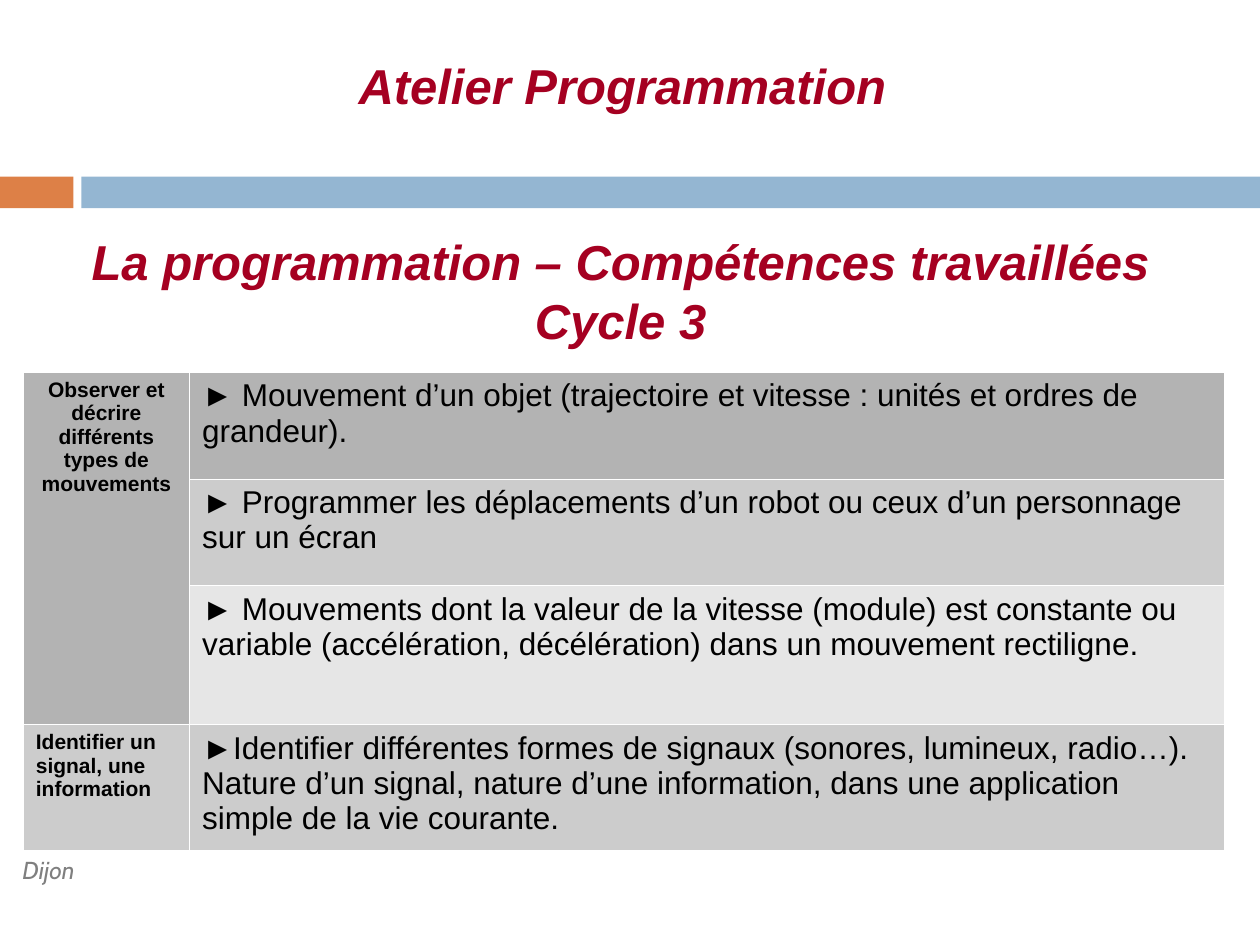
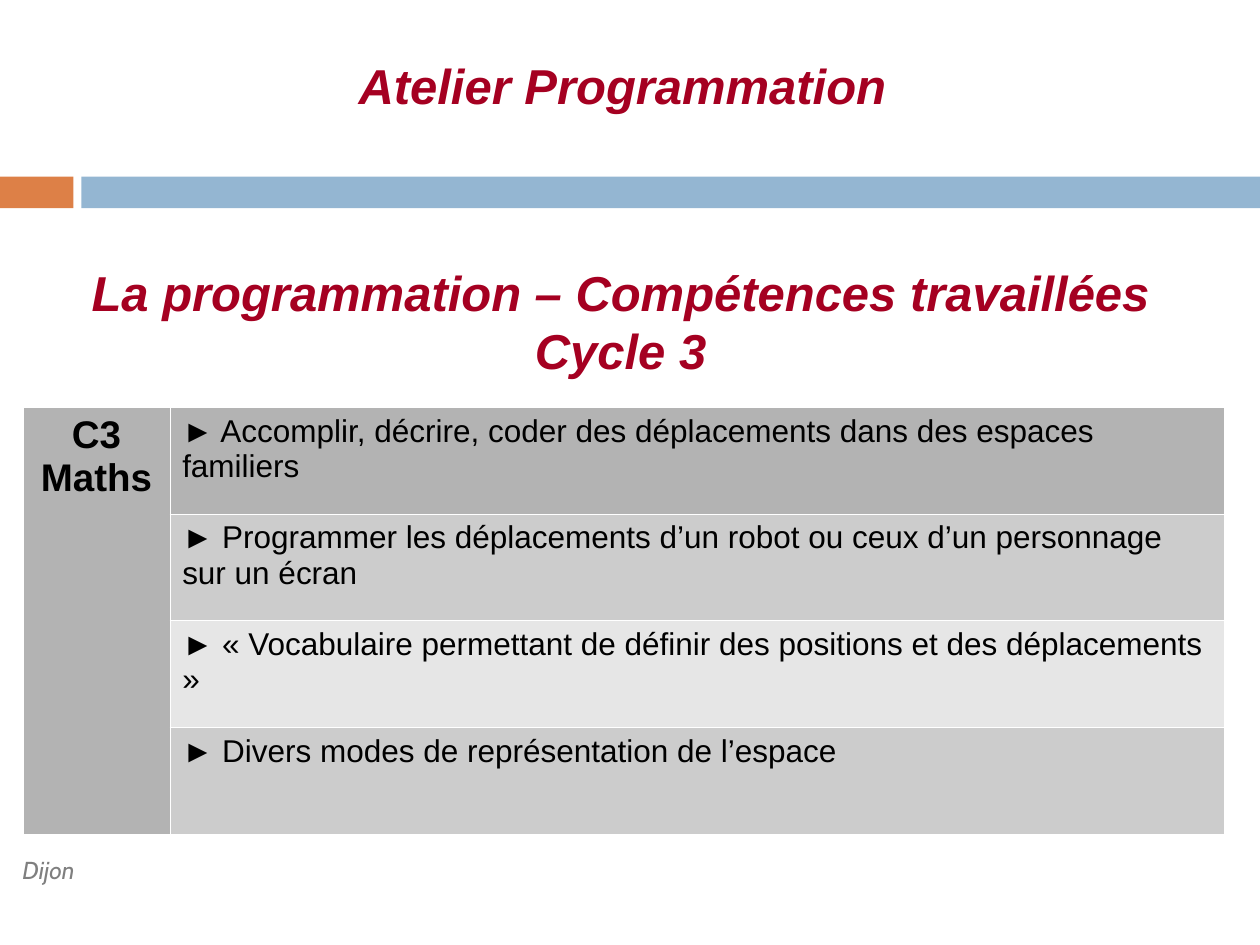
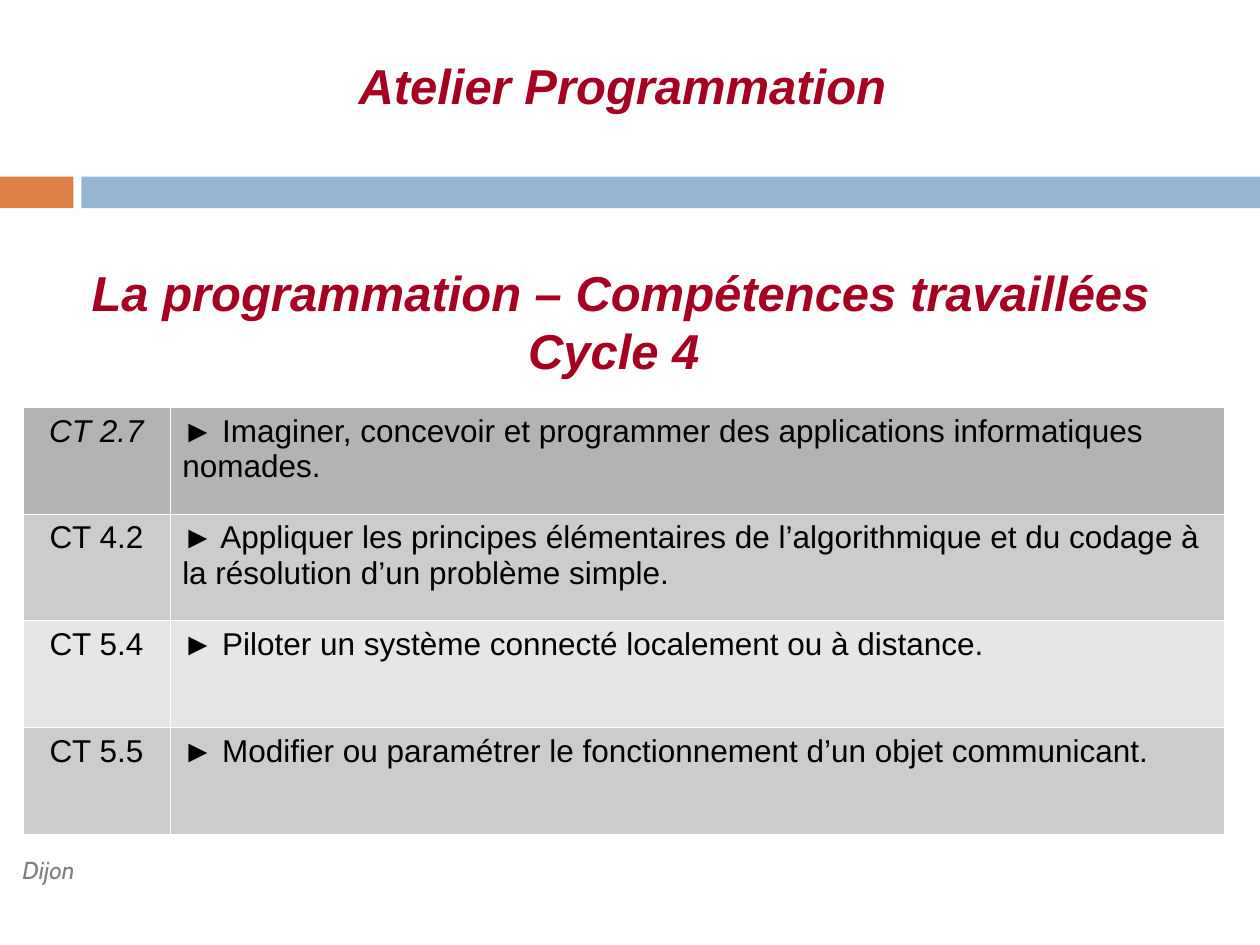
import dataclasses
import itertools
import typing

import lxml.etree
import pptx
import pptx.dml.color
import pptx.enum.shapes
import pptx.enum.text
import pptx.oxml.ns
import pptx.presentation
import pptx.shapes.autoshape
import pptx.slide
import pptx.table
import pptx.text.text
import pptx.util

Cm = pptx.util.Cm
Pt = pptx.util.Pt
ALIGN = pptx.enum.text.PP_ALIGN

COLORS = {
    "title": "A50021",
    "text": "000000",
    "footer": "7F7F7F",
    "accent": "DD8047",
    "band": "94B6D2",
    "border": "FFFFFF",
}
ROW_FILLS = ["B3B3B3", "CCCCCC", "E6E6E6", "CCCCCC"]

TITLE_FONT = {"name": "Arial", "size": Pt(28), "bold": True, "italic": True}
FOOTER_FONT = {"name": "Cabin", "size": Pt(14), "bold": False, "italic": True}
CELL_FONT = {"name": "Arial", "size": Pt(18), "bold": False, "italic": False}
TOPIC_FONT = CELL_FONT | {"size": Pt(12), "bold": True}
SUBJECT_FONT = CELL_FONT | {"size": Pt(22), "bold": True}
TABLE_WIDTH = 24.2


@dataclasses.dataclass(frozen=True)
class Box:
    left: float
    top: float
    width: float
    height: float

    def lengths(self) -> tuple[int, ...]:
        return tuple(Cm(value) for value in dataclasses.astuple(self))


@dataclasses.dataclass(frozen=True)
class Band:
    box: Box
    color: str


@dataclasses.dataclass(frozen=True)
class Label:
    text: str
    font: dict[str, typing.Any]
    alignment: ALIGN = ALIGN.CENTER


@dataclasses.dataclass(frozen=True)
class SkillRow:
    label: Label | None
    skill: str
    height: float = 2.15


@dataclasses.dataclass(frozen=True)
class SkillSlide:
    heading: str
    heading_top: float
    table_top: float
    label_width: float
    rows: list[SkillRow]


BANDS = [
    Band(Box(0, 3.56, 1.48, 0.64), "accent"),
    Band(Box(1.64, 3.56, 23.76, 0.64), "band"),
]
TITLE_BOX = Box(4.29, 1, 16.51, 1.45)
FOOTER_BOX = Box(-0.02, 17.12, 2, 1.09)

SLIDES = [
    SkillSlide("La programmation – Compétences travaillées\nCycle 3", 4.55, 7.5, 3.35, [
        SkillRow(Label("Observer et décrire différents types de mouvements", TOPIC_FONT),
                 "► Mouvement d’un objet (trajectoire et vitesse : unités et ordres de grandeur)."),
        SkillRow(None, "► Programmer les déplacements d’un robot ou ceux d’un personnage sur un écran"),
        SkillRow(None, "► Mouvements dont la valeur de la vitesse (module) est constante ou variable "
                 "(accélération, décélération) dans un mouvement rectiligne.", 2.8),
        SkillRow(Label("Identifier un signal, une information", TOPIC_FONT, ALIGN.LEFT),
                 "►Identifier différentes formes de signaux (sonores, lumineux, radio…).\n"
                 "Nature d’un signal, nature d’une information, dans une application simple "
                 "de la vie courante.", 2.54),
    ]),
    SkillSlide("La programmation – Compétences travaillées\nCycle 3", 5.16, 8.21, 2.95, [
        SkillRow(Label("C3\nMaths", SUBJECT_FONT),
                 "► Accomplir, décrire, coder des déplacements dans des espaces familiers"),
        SkillRow(None, "► Programmer les déplacements d’un robot ou ceux d’un personnage sur un écran"),
        SkillRow(None, "► « Vocabulaire permettant de définir des positions et des déplacements »"),
        SkillRow(None, "► Divers modes de représentation de l’espace"),
    ]),
    SkillSlide("La programmation – Compétences travaillées\nCycle 4 ", 5.16, 8.21, 2.95, [
        SkillRow(Label("CT 2.7", CELL_FONT | {"italic": True}),
                 "► Imaginer, concevoir et programmer des applications informatiques nomades."),
        SkillRow(Label("CT 4.2", CELL_FONT),
                 "► Appliquer les principes élémentaires de l’algorithmique et du codage à la "
                 "résolution d’un problème simple."),
        SkillRow(Label("CT 5.4", CELL_FONT), "► Piloter un système connecté localement ou à distance."),
        SkillRow(Label("CT 5.5", CELL_FONT),
                 "► Modifier ou paramétrer le fonctionnement d’un objet communicant."),
    ]),
]


def rgb(value: str) -> pptx.dml.color.RGBColor:
    return pptx.dml.color.RGBColor.from_string(value)


def write_text(frame: pptx.text.text.TextFrame, text: str, font: dict[str, typing.Any],
               color: str, alignment: ALIGN = ALIGN.CENTER) -> None:
    frame.text = text
    for paragraph in frame.paragraphs:
        paragraph.alignment = alignment
        for run in paragraph.runs:
            for name, value in font.items():
                setattr(run.font, name, value)
            run.font.color.rgb = rgb(COLORS[color])


def add_text(slide: pptx.slide.Slide, box: Box, text: str, font: dict[str, typing.Any],
             color: str, wrap: bool = True) -> pptx.shapes.autoshape.Shape:
    shape = slide.shapes.add_textbox(*box.lengths())
    shape.text_frame.word_wrap = wrap
    write_text(shape.text_frame, text, font, color)
    return shape


def add_band(slide: pptx.slide.Slide, band: Band) -> pptx.shapes.autoshape.Shape:
    shape = slide.shapes.add_shape(pptx.enum.shapes.MSO_SHAPE.RECTANGLE, *band.box.lengths())
    shape.shadow.inherit = False
    shape.fill.solid()
    shape.fill.fore_color.rgb = rgb(COLORS[band.color])
    shape.line.fill.background()
    return shape


def move_to_layout(slide: pptx.slide.Slide,
                   shapes: list[pptx.shapes.autoshape.Shape]) -> None:
    for number, shape in enumerate(shapes, 100):
        shape.element.nvSpPr.cNvPr.set("id", str(number))
        slide.slide_layout.shapes.element.append(shape.element)


def add_title(slide: pptx.slide.Slide) -> None:
    title = slide.shapes.title
    for name, value in zip(("left", "top", "width", "height"), TITLE_BOX.lengths()):
        setattr(title, name, value)
    frame_format = {
        "auto_size": pptx.enum.text.MSO_AUTO_SIZE.NONE,
        "vertical_anchor": pptx.enum.text.MSO_ANCHOR.TOP,
        "word_wrap": True,
    }
    for name, value in frame_format.items():
        setattr(title.text_frame, name, value)
    write_text(title.text_frame, "Atelier Programmation", TITLE_FONT, "title")


def format_cell(cell: pptx.table._Cell, fill: str) -> None:
    properties = cell._tc.get_or_add_tcPr()
    for side in ("lnL", "lnR", "lnT", "lnB"):
        line = lxml.etree.SubElement(properties, pptx.oxml.ns.qn(f"a:{side}"), w=str(Pt(0.06)))
        line_fill = lxml.etree.SubElement(line, pptx.oxml.ns.qn("a:solidFill"))
        lxml.etree.SubElement(line_fill, pptx.oxml.ns.qn("a:srgbClr"), val=COLORS["border"])
    cell.fill.solid()
    cell.fill.fore_color.rgb = rgb(fill)


def add_skill_table(slide: pptx.slide.Slide, content: SkillSlide) -> None:
    rows = content.rows
    box = Box(0.47, content.table_top, TABLE_WIDTH, sum(row.height for row in rows))
    table = slide.shapes.add_table(len(rows), 2, *box.lengths()).table
    table.first_row = table.horz_banding = False
    table.columns[0].width = Cm(content.label_width)
    table.columns[1].width = Cm(TABLE_WIDTH - content.label_width)

    starts = [index for index, row in enumerate(rows) if row.label]
    for start, end in itertools.pairwise([*starts, len(rows)]):
        if end - start > 1:
            table.cell(start, 0).merge(table.cell(end - 1, 0))
        for index in range(start, end):
            format_cell(table.cell(index, 0), ROW_FILLS[start])

    for index, row in enumerate(rows):
        table.rows[index].height = Cm(row.height)
        if row.label:
            write_text(table.cell(index, 0).text_frame, row.label.text, row.label.font,
                       "text", row.label.alignment)
        skill_cell = table.cell(index, 1)
        write_text(skill_cell.text_frame, row.skill, CELL_FONT, "text", ALIGN.LEFT)
        format_cell(skill_cell, ROW_FILLS[index])


def add_skill_slide(presentation: pptx.presentation.Presentation,
                    content: SkillSlide) -> pptx.slide.Slide:
    slide = presentation.slides.add_slide(presentation.slide_layouts[5])
    add_skill_table(slide, content)
    add_title(slide)
    add_text(slide, Box(0.61, content.heading_top, 23.8, 2.64), content.heading,
             TITLE_FONT, "title")
    return slide


def main() -> None:
    presentation = pptx.Presentation()
    presentation.slide_width = Cm(25.4)
    presentation.slide_height = Cm(19.05)
    slides = [add_skill_slide(presentation, content) for content in SLIDES]
    shared = [add_band(slides[0], band) for band in BANDS]
    shared.append(add_text(slides[0], FOOTER_BOX, "Dijon", FOOTER_FONT, "footer", wrap=False))
    move_to_layout(slides[0], shared)
    presentation.save("out.pptx")


if __name__ == "__main__":
    main()
